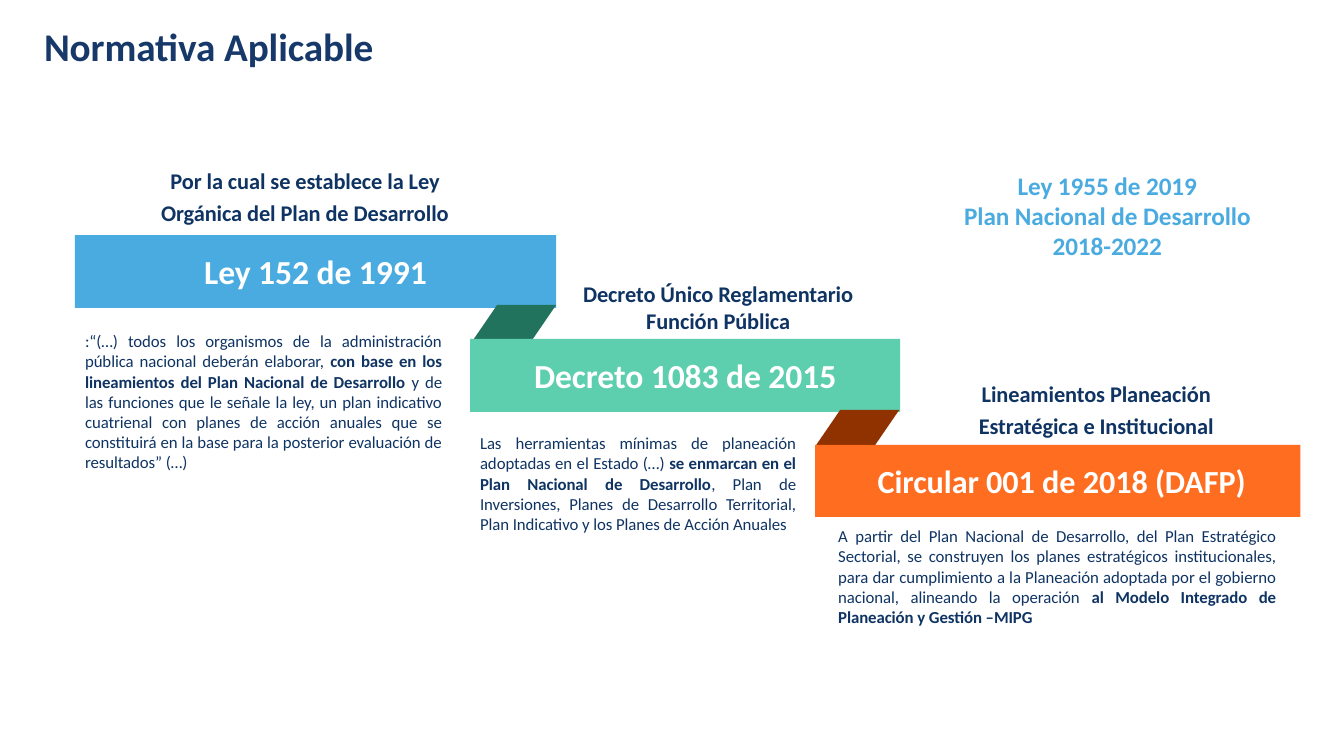
import dataclasses

import pptx
import pptx.dml.color
import pptx.enum.shapes
import pptx.enum.text
import pptx.util

ALIGN = pptx.enum.text.PP_ALIGN
ANCHOR = pptx.enum.text.MSO_ANCHOR


@dataclasses.dataclass(frozen=True)
class Theme:
    font: str = "Calibri"
    title: str = "173969"
    ink: str = "0F3463"
    white: str = "FFFFFF"
    blue: str = "4AABE0"
    green: str = "5DCEAE"
    orange: str = "FF6D20"
    dark_green: str = "22735D"
    brown: str = "903100"
    title_size: int = 28
    banner_size: int = 24
    last_banner_size: int = 23
    plan_size: int = 18
    heading_size: int = 16
    body_size: int = 12
    tracking: int = -5


class Canvas:
    scale = 914400 / 100.8

    def __init__(self, page, theme):
        self.page = page
        self.theme = theme

    def px(self, *lengths):
        return [pptx.util.Emu(round(length * self.scale)) for length in lengths]

    def color(self, name):
        return pptx.dml.color.RGBColor.from_string(getattr(self.theme, name))

    def frame(self, box, anchor=ANCHOR.TOP, left=0, top=0):
        frame = box.text_frame
        frame.word_wrap = True
        frame.auto_size = pptx.enum.text.MSO_AUTO_SIZE.NONE
        frame.vertical_anchor = anchor
        frame.margin_left, frame.margin_top = self.px(left, top)
        frame.margin_right = frame.margin_bottom = 0
        return frame

    def format(self, para, size, color, align, bold=None, spacing=None):
        para.alignment = align
        para.line_spacing = spacing
        for span in para.runs:
            span.font.name = self.theme.font
            span.font.size = pptx.util.Pt(size)
            span.font.color.rgb = self.color(color)
            if bold is not None:
                span.font.bold = bold
            span.font._element.set("spc", str(self.theme.tracking))

    def paint(self, shape, color):
        shape.shadow.inherit = False
        shape.fill.solid()
        shape.fill.fore_color.rgb = self.color(color)
        shape.line.fill.background()

    def title(self, text, place):
        box = self.page.shapes.title
        box.left, box.top, box.width, box.height = self.px(*place)
        frame = self.frame(box, top=2)
        frame.text = text
        self.format(frame.paragraphs[0], self.theme.title_size, "title", ALIGN.LEFT, True)

    def banner(self, text, place, color, size, indent=0):
        box = self.page.shapes.add_shape(
            pptx.enum.shapes.MSO_SHAPE.RECTANGLE, *self.px(*place))
        self.paint(box, color)
        frame = self.frame(box, ANCHOR.MIDDLE, left=indent)
        frame.text = text
        self.format(frame.paragraphs[0], size, "white", ALIGN.CENTER, True)

    def fold(self, right, top, color, width=59, slant=24, height=35):
        corners = [(right - width, top), (right - width - slant, top + height),
                   (right - slant, top + height)]
        builder = self.page.shapes.build_freeform(right, top, scale=self.scale)
        builder.add_line_segments(corners, close=True)
        self.paint(builder.convert_to_shape(), color)

    def heading(self, text, place, size, color="ink", spacing=None):
        frame = self.frame(self.page.shapes.add_textbox(*self.px(*place)), top=3)
        frame.text = text
        for para in frame.paragraphs:
            self.format(para, size, color, ALIGN.CENTER, True, spacing)

    def body(self, pieces, place):
        frame = self.frame(self.page.shapes.add_textbox(*self.px(*place)), left=1, top=3)
        para = frame.paragraphs[0]
        for text, bold in pieces:
            span = para.add_run()
            span.text = text
            span.font.bold = bold
        self.format(para, self.theme.body_size, "ink", ALIGN.JUSTIFY)


def main():
    theme = Theme()
    deck = pptx.Presentation()
    deck.slide_width = pptx.util.Inches(13.33)
    deck.slide_height = pptx.util.Inches(7.5)
    page = deck.slides.add_slide(deck.slide_layouts.get_by_name("Title Only"))
    canvas = Canvas(page, theme)

    canvas.title("Normativa Aplicable", (44, 20, 340, 49))

    canvas.banner("Ley 152 de 1991", (75, 235, 481, 73), "blue", theme.banner_size)
    canvas.heading("Por la cual se establece la Ley Orgánica del Plan de Desarrollo",
                   (157, 159, 296, 67), theme.heading_size, spacing=1.19)
    canvas.body([
        (":“(…) todos los organismos de la administración pública nacional "
         "deberán elaborar, ", False),
        ("con base en los lineamientos del Plan Nacional de Desarrollo ", True),
        ("y de las funciones que le señale la ley, un plan indicativo cuatrienal "
         "con planes de acción anuales que se constituirá en la base para la "
         "posterior evaluación de resultados” (…)", False),
    ], (84, 328, 358, 144))

    canvas.fold(556, 305, "dark_green")
    canvas.banner("Decreto 1083 de 2015", (470, 339, 430, 73), "green", theme.banner_size)
    canvas.heading("Decreto Único Reglamentario Función Pública",
                   (578, 277, 280, 56), theme.heading_size)
    canvas.body([
        ("Las herramientas mínimas de planeación adoptadas en el Estado (…) ", False),
        ("se enmarcan en el Plan Nacional de Desarrollo", True),
        (", Plan de Inversiones, Planes de Desarrollo Territorial, Plan Indicativo "
         "y los Planes de Acción Anuales", False),
    ], (479, 430, 317, 104))

    canvas.fold(899, 410, "brown")
    canvas.banner("Circular 001 de 2018 (DAFP)", (815, 445, 485, 72), "orange",
                  theme.last_banner_size, indent=8)
    canvas.heading("Lineamientos Planeación Estratégica e Institucional",
                   (973, 372, 246, 67), theme.heading_size, spacing=1.19)
    canvas.body([
        ("A partir del Plan Nacional de Desarrollo, del Plan Estratégico Sectorial, "
         "se construyen los planes estratégicos institucionales, para dar "
         "cumplimiento a la Planeación adoptada por el gobierno nacional, "
         "alineando la operación ", False),
        ("al Modelo Integrado de Planeación y Gestión –MIPG", True),
    ], (837, 523, 439, 104))

    canvas.heading("Ley 1955 de 2019\nPlan Nacional de Desarrollo 2018-2022",
                   (961, 167, 292, 94), theme.plan_size, "blue")

    deck.save("out.pptx")


if __name__ == "__main__":
    main()
